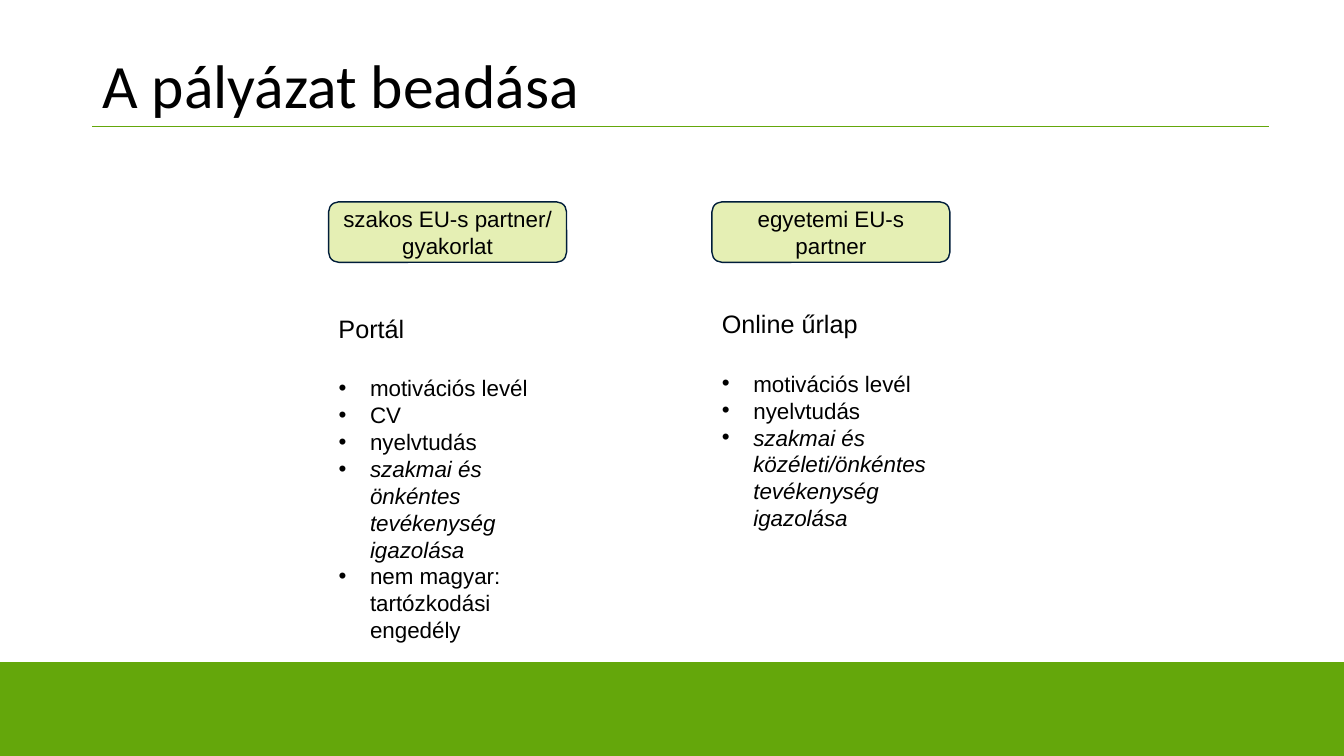
from pptx import Presentation
from pptx.dml.color import RGBColor
from pptx.enum.shapes import MSO_CONNECTOR, MSO_SHAPE
from pptx.enum.text import MSO_ANCHOR, PP_ALIGN
from pptx.oxml.ns import qn
from pptx.util import Pt
from lxml.etree import SubElement


def color(code):
    return RGBColor.from_string(code)


def write(shape, *lines, size=16, font="Arial", align=PP_ALIGN.LEFT,
          anchor=MSO_ANCHOR.TOP, bullet=False, italic="", spacing=None):
    frame = shape.text_frame
    frame.word_wrap = True
    frame.vertical_anchor = anchor
    for i, line in enumerate(lines):
        para = frame.add_paragraph() if i else frame.paragraphs[0]
        para.alignment = align
        if spacing:
            para.line_spacing = spacing
        if bullet:
            props = para._p.get_or_add_pPr()
            props.set("marL", str(Pt(22.5)))
            props.set("indent", str(Pt(-22.5)))
            SubElement(props, qn("a:buFont"), typeface="Arial")
            SubElement(props, qn("a:buChar"), char="•")
        run = para.add_run()
        run.text = line
        run.font.name = font
        run.font.size = Pt(size)
        run.font.italic = line == italic
        run.font.color.rgb = color("000000")


deck = Presentation()
deck.slide_width, deck.slide_height = Pt(960), Pt(540)
slide = deck.slides.add_slide(deck.slide_layouts[6])
shapes = slide.shapes

band = shapes.add_shape(MSO_SHAPE.RECTANGLE, Pt(0), Pt(473), Pt(960), Pt(67))
band.shadow.inherit = False
band.fill.solid()
band.fill.fore_color.rgb = color("64A70B")
band.line.fill.background()

rule = shapes.add_connector(MSO_CONNECTOR.STRAIGHT, Pt(66), Pt(90.2), Pt(906.5), Pt(90.2))
rule.line.color.rgb = color("64A70B")
rule.line.width = Pt(0.75)
SubElement(rule._element.spPr, qn("a:effectLst"))

title = shapes.add_textbox(Pt(66), Pt(11.2), Pt(828), Pt(104.4))
write(title, "A pályázat beadása", size=44, font="Calibri",
      anchor=MSO_ANCHOR.MIDDLE, spacing=0.9)

tracks = [
    (234.7, 220.3, "szakos EU-s partner/ gyakorlat", "Portál",
     "szakmai és önkéntes tevékenység igazolása",
     ["motivációs levél", "CV", "nyelvtudás",
      "szakmai és önkéntes tevékenység igazolása",
      "nem magyar: tartózkodási engedély"]),
    (508.5, 217, "egyetemi EU-s partner", "Online űrlap",
     "szakmai és közéleti/önkéntes tevékenység igazolása",
     ["motivációs levél", "nyelvtudás",
      "szakmai és közéleti/önkéntes tevékenység igazolása"]),
]

for left, top, name, form, proof, items in tracks:
    box = shapes.add_shape(MSO_SHAPE.ROUNDED_RECTANGLE, Pt(left), Pt(144.2), Pt(170), Pt(43.2))
    box.shadow.inherit = False
    box.fill.solid()
    box.fill.fore_color.rgb = color("B9D531")
    tint = box._element.spPr.find(qn("a:solidFill"))[0]
    SubElement(tint, qn("a:alpha"), val="36000")
    box.line.color.rgb = color("001D3A")
    box.line.width = Pt(1)
    write(box, name, align=PP_ALIGN.CENTER, anchor=MSO_ANCHOR.MIDDLE)

    head = shapes.add_textbox(Pt(left), Pt(top), Pt(165.5), Pt(29))
    write(head, form, size=18)

    docs = shapes.add_textbox(Pt(left), Pt(top + 43.7), Pt(170), Pt(len(items) * 19 + 106))
    write(docs, *items, bullet=True, italic=proof)

deck.save("out.pptx")
